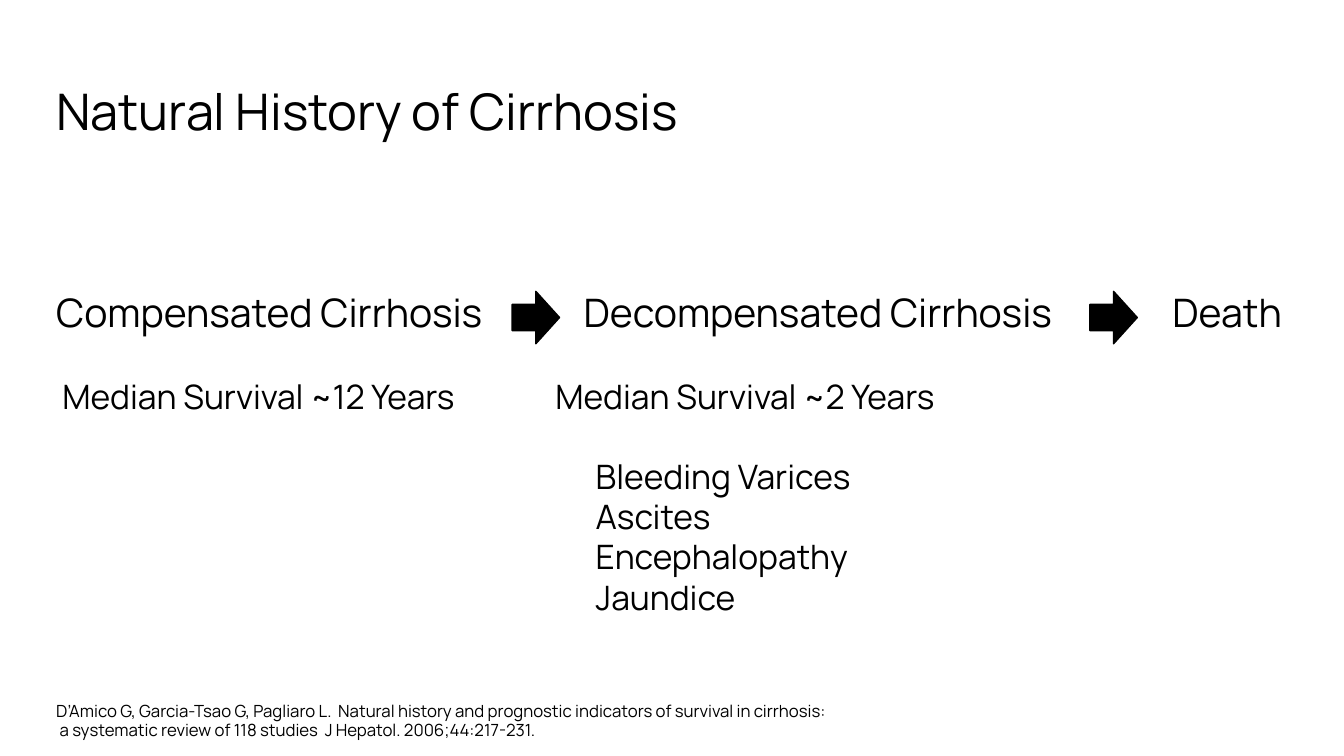
from pptx import Presentation, util as u
from pptx.dml.color import RGBColor
from pptx.enum import shapes, text

WIDE, HIGH = 13.33, 7.5
FONT, INK = "Manrope", "000000"
LEFT = 0.46
ROW = 2.81  # top of the stage names
SUB = 3.68  # top of the survival line

TITLE = "Natural History of Cirrhosis"
# name, left, width
STAGES = [
    ("Compensated Cirrhosis", LEFT, 4.6),
    ("Decompensated Cirrhosis", 5.69, 5.05),
    ("Death", 11.53, 1.48),
]
# survival, left
SPANS = [
    ("Median Survival ~12 Years", 0.52),
    ("Median Survival ~2 Years", 5.41),
]
ARROWS = [5.08, 10.81]
SIGNS = ["Bleeding Varices", "Ascites", "Encephalopathy", "Jaundice"]
SOURCE = [
    "D’Amico G, Garcia-Tsao G, Pagliaro L.  Natural history and prognostic "
    "indicators of survival in cirrhosis:",
    " a systematic review of 118 studies  J Hepatol. 2006;44:217-231.",
]


def color(code):
    return RGBColor.from_string(code)


def write(slide, lines, x, y, w, h, size=24, lead=None):
    """Add a text box with one paragraph for each line."""
    box = slide.shapes.add_textbox(*map(u.Inches, (x, y, w, h)))
    frame = box.text_frame
    frame.word_wrap = True
    frame.auto_size = text.MSO_AUTO_SIZE.SHAPE_TO_FIT_TEXT
    for i, line in enumerate(lines):
        para = frame.paragraphs[0] if i == 0 else frame.add_paragraph()
        para.line_spacing = lead
        run = para.add_run()
        run.text = line
        run.font.name = FONT
        run.font.size = u.Pt(size)
        run.font.color.rgb = color(INK)


def arrow(slide, x, y, w=0.47, h=0.52):
    kind = shapes.MSO_SHAPE.RIGHT_ARROW
    shape = slide.shapes.add_shape(kind, *map(u.Inches, (x, y, w, h)))
    shape.shadow.inherit = False
    shape.fill.solid()
    shape.fill.fore_color.rgb = color(INK)
    shape.line.color.rgb = color(INK)
    shape.line.width = u.Pt(1)


def main():
    deck = Presentation()
    deck.slide_width, deck.slide_height = u.Inches(WIDE), u.Inches(HIGH)
    slide = deck.slides.add_slide(deck.slide_layouts[6])

    write(slide, [TITLE], LEFT, 0.1 * HIGH, 9.7, 0.71, size=36)
    for name, x, w in STAGES:
        write(slide, [name], x, ROW, w, 0.57, size=28)
    for span, x in SPANS:
        write(slide, [span], x, SUB, 4.4, 0.5)
    for x in ARROWS:
        arrow(slide, x, ROW + 0.08)
    write(slide, SIGNS, 5.81, 4.47, 4.02, 1.72)
    write(slide, SOURCE, LEFT, 6.93, 10.7, 0.46, size=12, lead=0.9)

    deck.save("out.pptx")


if __name__ == "__main__":
    main()
